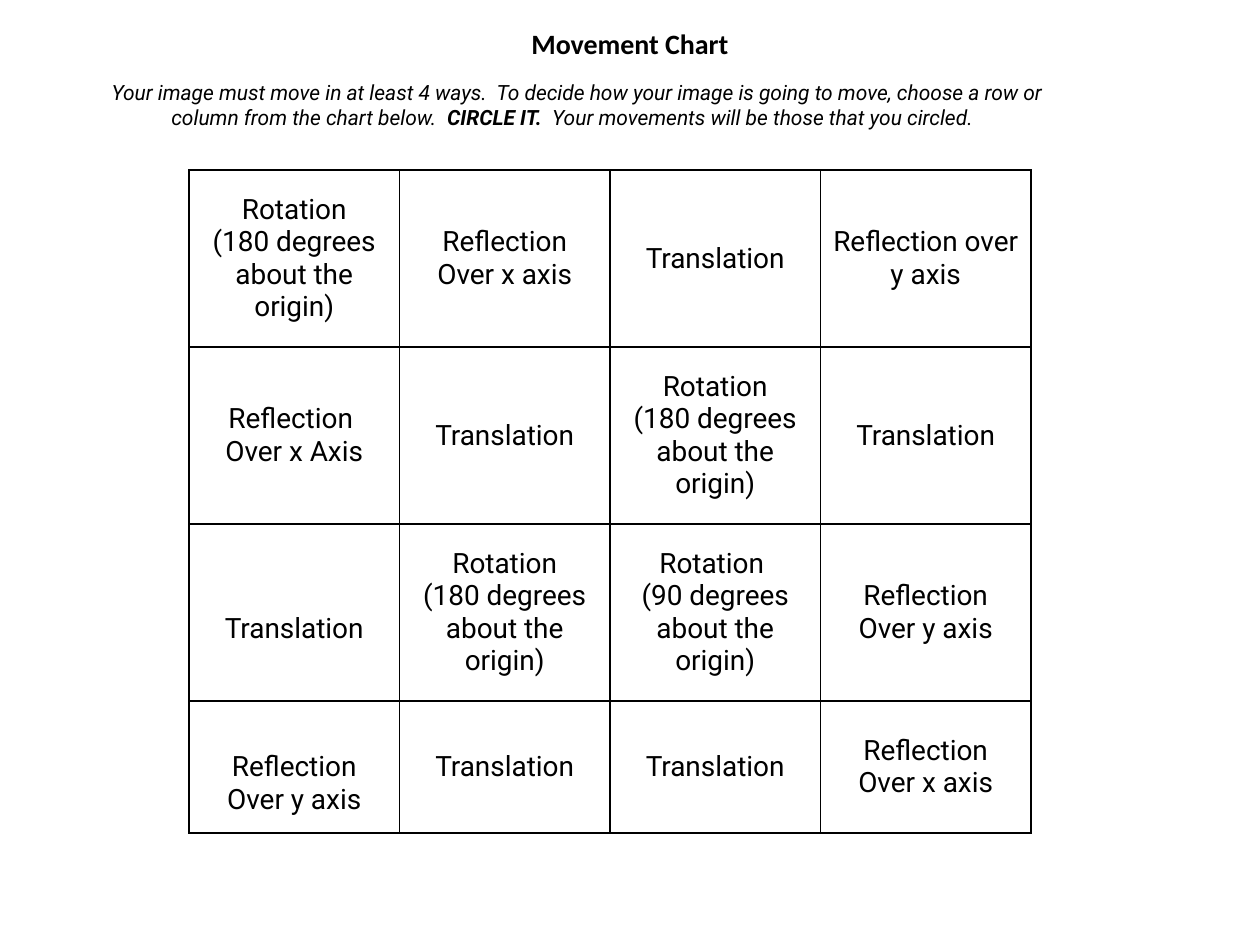
from lxml.etree import SubElement as Sub
from pptx import Presentation
from pptx.dml.color import RGBColor
from pptx.enum.text import MSO_ANCHOR as Anchor, PP_ALIGN as Align
from pptx.oxml.ns import qn
from pptx.util import Emu, Pt

SCALE = 914400 / 126  # EMU in one px


def px(n):
    return Emu(round(n * SCALE))


def color(code):
    return RGBColor.from_string(code)


def write(par, text, font="Roboto", size=16, ink="000000", bold=False, italic=False):
    par.alignment = Align.CENTER
    run = par.add_run()
    run.text = text
    face = run.font
    face.name, face.size, face.bold, face.italic = font, Pt(size), bold, italic
    face.color.rgb = color(ink)


class Board:
    ink = "000000"
    paper = "FFFFFF"
    line = Pt(1)
    pad = 9

    def __init__(self, slide):
        self.slide = slide

    def label(self, x, y, w, h, parts, **style):
        frame = self.slide.shapes.add_textbox(px(x), px(y), px(w), px(h)).text_frame
        frame.word_wrap = True
        frame.vertical_anchor = Anchor.MIDDLE
        for text, extra in parts:
            write(frame.paragraphs[0], text, ink=self.ink, **style, **extra)

    def border(self, cell):
        props = cell._tc.get_or_add_tcPr()
        for side in ("lnL", "lnR", "lnT", "lnB"):
            edge = Sub(props, qn(f"a:{side}"), w=str(self.line))
            fill = Sub(edge, qn("a:solidFill"))
            Sub(fill, qn("a:srgbClr"), val=self.ink)

    def cell(self, cell, lines, top=0):
        cell.margin_left = cell.margin_right = px(self.pad)
        cell.margin_top, cell.margin_bottom = px(top), 0
        cell.vertical_anchor = Anchor.MIDDLE
        self.border(cell)
        cell.fill.solid()
        cell.fill.fore_color.rgb = color(self.paper)
        frame = cell.text_frame
        for i, text in enumerate(lines):
            par = frame.add_paragraph() if i else frame.paragraphs[0]
            write(par, text, ink=self.ink)

    def table(self, x, y, w, heights, rows, drops):
        count = len(rows[0])
        grid = self.slide.shapes.add_table(
            len(rows), count, px(x), px(y), px(w), px(sum(heights))).table
        grid.first_row = grid.horz_banding = False
        for col in grid.columns:
            col.width = px(w / count)
        for r, (row, high) in enumerate(zip(rows, heights)):
            grid.rows[r].height = px(high)
            for c, lines in enumerate(row):
                self.cell(grid.cell(r, c), lines, drops.get((r, c), 0))


deck = Presentation()
deck.slide_width, deck.slide_height = px(1260), px(945)
board = Board(deck.slides.add_slide(deck.slide_layouts[6]))

# Heading and task
board.label(63, 10, 1134, 67, [("Movement Chart", {})], font="Calibri", bold=True)
board.label(63, 73, 1029, 63, [
    ("Your image must move in at least 4 ways.  To decide how your image is "
     "going to move, choose a row or column from the chart below.  ", {}),
    ("CIRCLE IT.", {"bold": True}),
    ("  Your movements will be those that you circled.  ", {}),
], size=12, italic=True)

# Grid of moves
slide = ["Translation"]
turn = ["Rotation", "(180 degrees about the origin)"]
quarter = ["Rotation ", "(90 degrees about the origin)"]
flip_x = ["Reflection", "Over x axis"]
flip_y = ["Reflection", "Over y axis"]
moves = [
    [turn, flip_x, slide, ["Reflection over y axis"]],
    [["Reflection ", "Over x Axis"], slide, turn, slide],
    [slide, turn, quarter, flip_y],
    [flip_y, slide, slide, flip_x],
]
# Two cells sit one text line lower
board.table(189, 170, 842, [177, 177, 177, 132], moves, {(2, 0): 33, (3, 0): 33})

deck.save("out.pptx")
